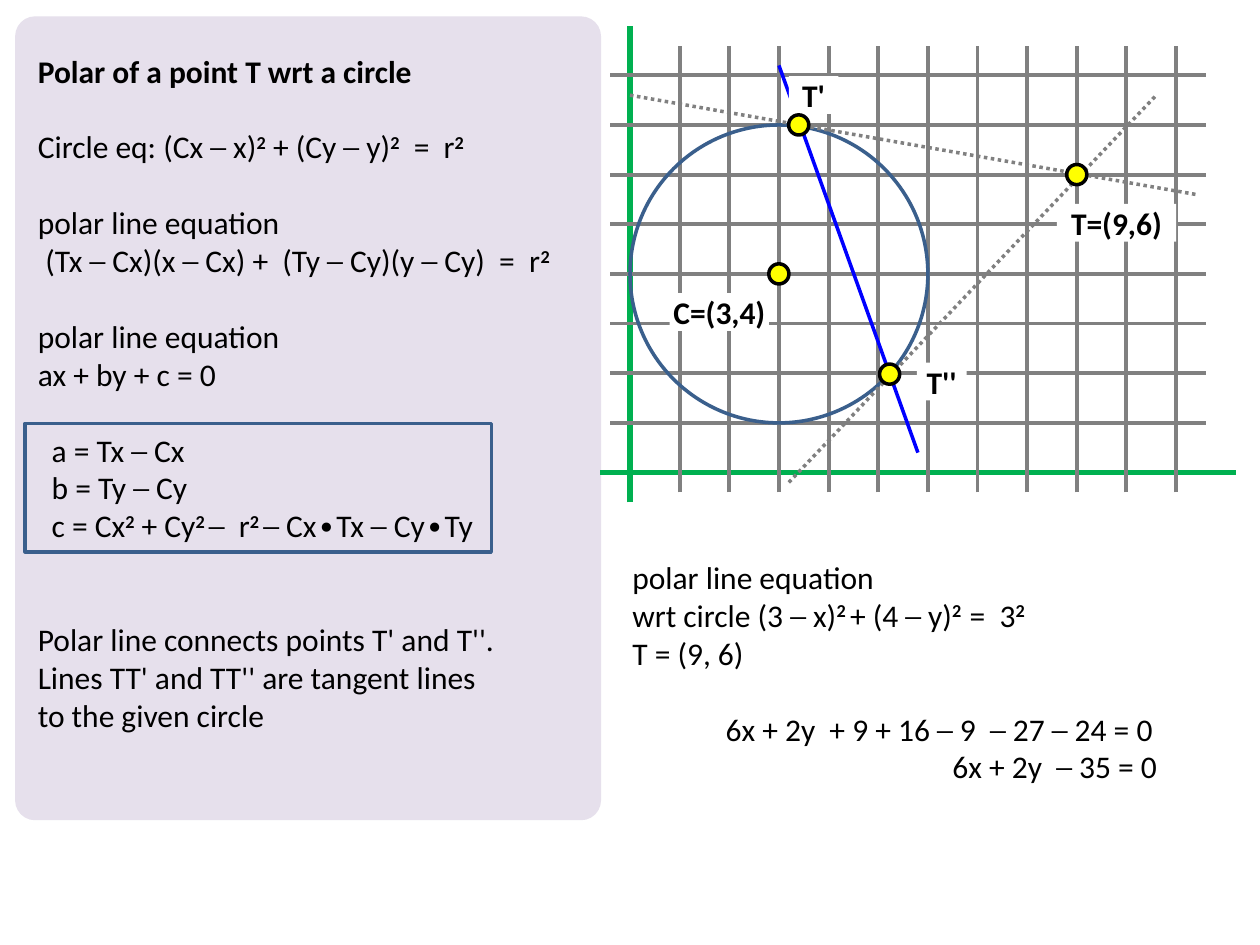
from lxml.etree import SubElement
from pptx import Presentation
from pptx.dml.color import RGBColor
from pptx.enum.dml import MSO_LINE
from pptx.enum.shapes import MSO_CONNECTOR, MSO_SHAPE
from pptx.enum.text import MSO_ANCHOR, MSO_AUTO_SIZE, PP_ALIGN
from pptx.oxml.ns import qn
from pptx.util import Inches, Pt

COLOURS = {name: RGBColor.from_string(value) for name, value in {
    "panel": "E6E0EC", "grid": "808080", "axis": "00B050", "polar": "0000FF",
    "circle": "3A5F8C", "point": "FFFF00", "ink": "000000", "paper": "FFFFFF",
}.items()}
FONT, SIZE, LINE_HEIGHT = "Calibri", Pt(18), Pt(21.8)
UNIT = Inches(0.394)
ORIGIN_X, ORIGIN_Y = Inches(5), Inches(3.75)

prs = Presentation()
prs.slide_width, prs.slide_height = Inches(10), Inches(7.5)
slide = prs.slides.add_slide(prs.slide_layouts[1])
shapes = slide.shapes


def write(frame, lines, bold=False):
    """Write (text, empty lines above, left indent in inches); |...| is superscript."""
    frame.word_wrap = True
    frame.auto_size = MSO_AUTO_SIZE.NONE
    for number, (text, gap, indent) in enumerate(lines):
        paragraph = frame.paragraphs[0] if number == 0 else frame.add_paragraph()
        paragraph.alignment = PP_ALIGN.LEFT
        paragraph.space_before = gap * LINE_HEIGHT
        properties = paragraph._p.get_or_add_pPr()
        properties.set("marL", str(Inches(indent)))
        properties.set("indent", "0")
        SubElement(properties, qn("a:buNone"))
        for part, piece in enumerate(text.split("|")):
            if not piece:
                continue
            run = paragraph.add_run()
            run.text = piece
            run.font.name, run.font.size = FONT, SIZE
            run.font.color.rgb = COLOURS["ink"]
            raised = part % 2 == 1
            run.font.bold = bold or raised
            if raised:
                run._r.get_or_add_rPr().set("baseline", "30000")


def draw_line(start, end, colour, width, dotted=False):
    """Join two points given in the units of the coordinate grid."""
    ends = [(int(ORIGIN_X + x * UNIT), int(ORIGIN_Y - y * UNIT)) for x, y in (start, end)]
    line = shapes.add_connector(MSO_CONNECTOR.STRAIGHT, *ends[0], *ends[1])
    line.line.color.rgb = COLOURS[colour]
    line.line.width = Pt(width)
    if dotted:
        line.line.dash_style = MSO_LINE.ROUND_DOT
    SubElement(line._element.spPr, qn("a:effectLst"))


# Theory on the left
panel = shapes.add_shape(MSO_SHAPE.ROUNDED_RECTANGLE, Inches(0.12), Inches(0.13),
                         Inches(4.65), Inches(6.38))
panel.adjustments[0] = 0.034
panel.shadow.inherit = False
panel.fill.solid()
panel.fill.fore_color.rgb = COLOURS["panel"]
panel.line.fill.background()
shapes._spTree.insert(2, panel._element)

heading, theory = shapes.title, slide.placeholders[1]
for holder, top, height in ((heading, 0.36, 0.4), (theory, 0.96, 4.95)):
    holder.left, holder.top = Inches(0.2), Inches(top)
    holder.width, holder.height = Inches(4.49), Inches(height)
    holder.text_frame.vertical_anchor = MSO_ANCHOR.TOP

write(heading.text_frame, [("Polar of a point T wrt a circle", 0, 0)], bold=True)
write(theory.text_frame, [
    ("Circle eq: (Cx ─ x)|2| + (Cy ─ y)|2|  =  r|2|", 0, 0),
    ("polar line equation", 1, 0),
    ("(Tx ─ Cx)(x ─ Cx) +  (Ty ─ Cy)(y ─ Cy)  =  r|2|", 0, 0.06),
    ("polar line equation", 1, 0),
    ("ax + by + c = 0", 0, 0),
    ("a = Tx ─ Cx", 1, 0.11),
    ("b = Ty ─ Cy", 0, 0.11),
    ("c = Cx|2| + Cy|2 |─  r|2 |─ Cx∙Tx ─ Cy∙Ty", 0, 0.11),
    ("Polar line connects points T' and T''.", 2, 0),
    ("Lines TT' and TT'' are tangent lines", 0, 0),
    ("to the given circle", 0, 0),
])

coefficients = shapes.add_shape(MSO_SHAPE.RECTANGLE, Inches(0.2), Inches(3.36),
                                Inches(3.7), Inches(1.02))

# Worked example below the diagram
example = shapes.add_textbox(Inches(4.92), Inches(4.38), Inches(4.65), Inches(1.92))
write(example.text_frame, [
    ("polar line equation", 0, 0),
    ("wrt circle (3 ─ x)|2 |+ (4 ─ y)|2  |=  3|2|", 0, 0),
    ("T = (9, 6)", 0, 0),
    ("6x + 2y  + 9 + 16 ─ 9  ─ 27 ─ 24 = 0", 1, 0.74),
    ("6x + 2y  ─ 35 = 0", 0, 2.54),
])

# Coordinate grid
draw_line((-0.6, 0), (12.2, 0), "axis", 3)
draw_line((0, -0.6), (0, 9), "axis", 3)
for x in range(1, 12):
    draw_line((x, -0.4), (x, 8.6), "grid", 2.25)
for y in range(1, 9):
    draw_line((-0.4, y), (11.6, y), "grid", 2.25)

# Circle of radius 3 around (3, 4)
circle = shapes.add_shape(MSO_SHAPE.OVAL, ORIGIN_X, ORIGIN_Y - 7 * UNIT, 6 * UNIT, 6 * UNIT)
for outline in (coefficients, circle):
    outline.shadow.inherit = False
    outline.fill.background()
    outline.line.color.rgb = COLOURS["circle"]
    outline.line.width = Pt(2)

# Tangents and polar line
draw_line((0, 7.6), (11.4, 5.6), "grid", 2, dotted=True)
draw_line((3.2, -0.2), (10.6, 7.6), "grid", 2, dotted=True)
draw_line((3, 8.2), (5.8, 0.4), "polar", 2)

# Labels: text, centre and width in grid units
for text, x, y, width in (("C=(3,4)", 1.8, 3.23, 2), ("T=(9,6)", 9.8, 5.03, 2.4),
                          ("T'", 3.7, 7.6, 1), ("T''", 6.28, 1.83, 1)):
    height = Inches(0.3)
    label = shapes.add_shape(MSO_SHAPE.RECTANGLE, int(ORIGIN_X + (x - width / 2) * UNIT),
                             int(ORIGIN_Y - y * UNIT - height / 2), int(width * UNIT), height)
    label.shadow.inherit = False
    label.fill.solid()
    label.fill.fore_color.rgb = COLOURS["paper"]
    label.line.fill.background()
    frame = label.text_frame
    frame.margin_left = frame.margin_right = frame.margin_top = frame.margin_bottom = 0
    frame.vertical_anchor = MSO_ANCHOR.MIDDLE
    write(frame, [(text, 0, 0)], bold=True)
    frame.paragraphs[0].alignment = PP_ALIGN.CENTER

# Points C, T, T' and T''
for x, y in ((3, 4), (9, 6), (3.4, 7), (5.23, 1.98)):
    diameter = Inches(0.16)
    point = shapes.add_shape(MSO_SHAPE.OVAL, int(ORIGIN_X + x * UNIT - diameter / 2),
                             int(ORIGIN_Y - y * UNIT - diameter / 2), diameter, diameter)
    point.shadow.inherit = False
    point.fill.solid()
    point.fill.fore_color.rgb = COLOURS["point"]
    point.line.color.rgb = COLOURS["ink"]
    point.line.width = Pt(2)

prs.save("out.pptx")
